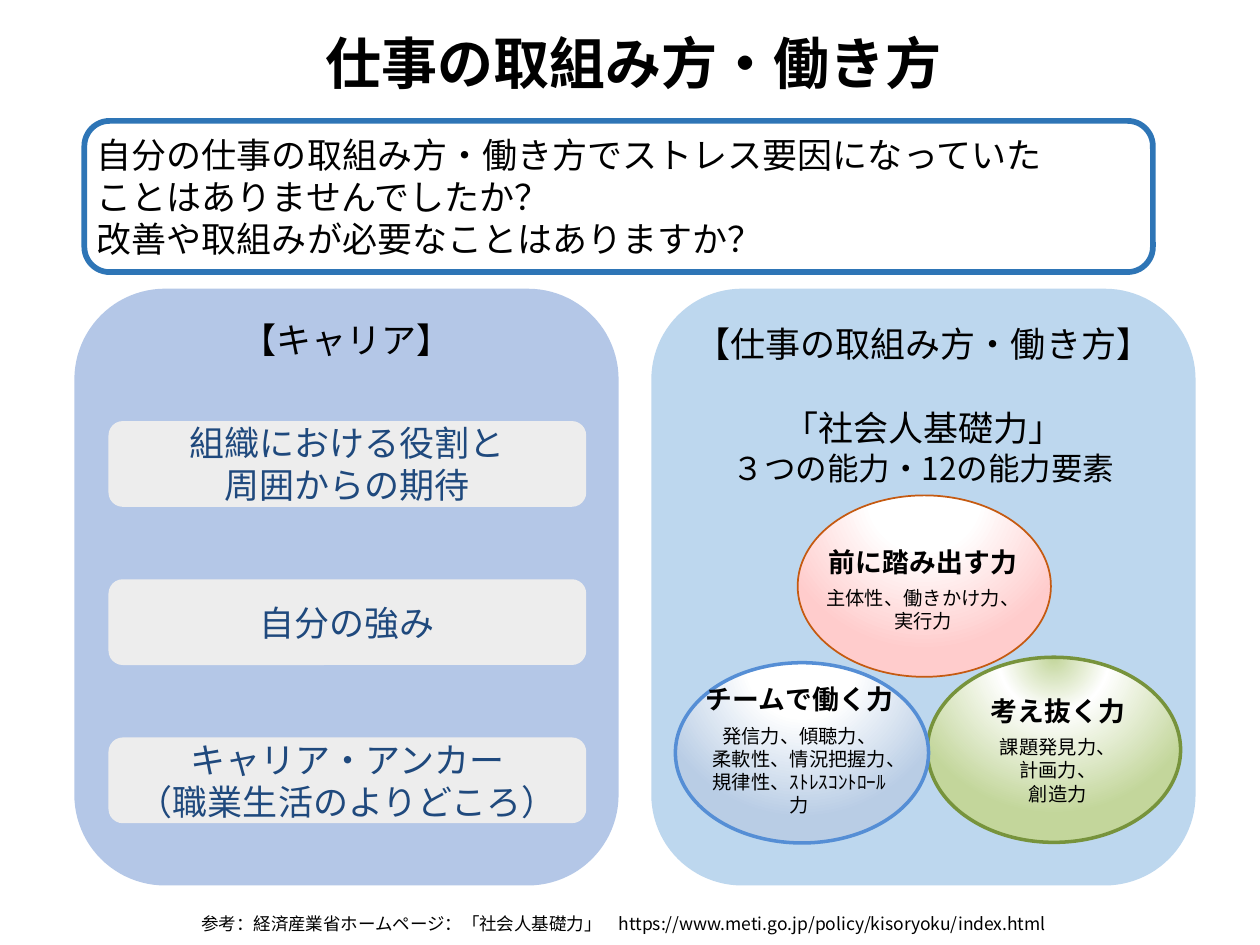
from pptx import Presentation
from pptx.dml.color import RGBColor
from pptx.enum.shapes import MSO_SHAPE
from pptx.enum.text import MSO_ANCHOR, PP_ALIGN
from pptx.oxml import parse_xml
from pptx.oxml.ns import nsdecls, qn
from pptx.util import Pt

ROUNDED, OVAL = MSO_SHAPE.ROUNDED_RECTANGLE, MSO_SHAPE.OVAL
TOP, MIDDLE = MSO_ANCHOR.TOP, MSO_ANCHOR.MIDDLE
LEFT, CENTER = PP_ALIGN.LEFT, PP_ALIGN.CENTER

BLACK = RGBColor(0x00, 0x00, 0x00)
WHITE = RGBColor(0xFF, 0xFF, 0xFF)
NAVY = RGBColor(0x1F, 0x49, 0x7D)
FRAME_BLUE = RGBColor(0x2E, 0x75, 0xB6)
CAREER_BLUE = RGBColor(0xB4, 0xC7, 0xE7)
WORK_BLUE = RGBColor(0xBD, 0xD7, 0xEE)
BOX_GRAY = RGBColor(0xED, 0xED, 0xED)
PINK, ORANGE = RGBColor(0xFF, 0xCC, 0xCC), RGBColor(0xC5, 0x5A, 0x11)
LIME, GREEN = RGBColor(0xC3, 0xD6, 0x9B), RGBColor(0x77, 0x93, 0x3C)
PALE_BLUE, BLUE = RGBColor(0xB9, 0xCD, 0xE5), RGBColor(0x55, 0x8E, 0xD5)


class SlideBuilder:
    font_name = "Noto Sans CJK JP"

    def __init__(self, presentation):
        self.slide = presentation.slides.add_slide(presentation.slide_layouts[5])

    def set_text(self, shape, lines, size=20, color=BLACK, align=CENTER, anchor=MIDDLE, margins=(0, 0, 0, 0)):
        """Fill a shape with lines, each a string or a (string, formats) pair."""
        frame = shape.text_frame
        frame.word_wrap = True
        frame.vertical_anchor = anchor
        for side, margin in zip(("left", "top", "right", "bottom"), margins):
            setattr(frame, f"margin_{side}", Pt(margin))
        for index, line in enumerate(lines):
            text, formats = (line, {}) if isinstance(line, str) else line
            paragraph = frame.paragraphs[0] if index == 0 else frame.add_paragraph()
            paragraph_formats = {"alignment": align, **formats.get("paragraph", {})}
            for name, value in paragraph_formats.items():
                setattr(paragraph, name, value)
            run = paragraph.add_run()
            run.text = text
            font_formats = {"name": self.font_name, "size": Pt(size), "bold": False, **formats.get("font", {})}
            for name, value in font_formats.items():
                setattr(run.font, name, value)
            run.font.color.rgb = color
            east_asian = run.font._element.makeelement(qn("a:ea"), {"typeface": self.font_name})
            run.font._element.find(qn("a:latin")).addnext(east_asian)

    def title(self, text, left, top, width, height):
        shape = self.slide.shapes.title
        for name, value in dict(left=left, top=top, width=width, height=height).items():
            setattr(shape, name, Pt(value))
        self.set_text(shape, [(text, {"font": {"bold": True}, "paragraph": {"line_spacing": 0.9}})], size=32)

    def shape(self, kind, bounds, fill, line=None, line_width=1):
        shape = self.slide.shapes.add_shape(kind, *map(Pt, bounds))
        shape.shadow.inherit = False
        shape.fill.solid()
        shape.fill.fore_color.rgb = fill
        if line is None:
            shape.line.fill.background()
        else:
            shape.line.color.rgb = line
            shape.line.width = Pt(line_width)
        return shape

    def glowing_oval(self, bounds, inner, outer, line, line_width):
        """Add an oval with a circular gradient centred above its top edge."""
        shape = self.shape(OVAL, bounds, outer, line, line_width)
        stops = "".join(
            f'<a:gs pos="{position * 1000}"><a:srgbClr val="{color}"/></a:gs>'
            for position, color in ((0, inner), (35, WHITE), (100, outer))
        )
        gradient = parse_xml(
            f'<a:gradFill {nsdecls("a")} rotWithShape="1"><a:gsLst>{stops}</a:gsLst><a:path path="circle">'
            '<a:fillToRect l="50000" t="-80000" r="50000" b="180000"/></a:path></a:gradFill>'
        )
        properties = shape._element.spPr
        properties.replace(properties.find(qn("a:solidFill")), gradient)

    def text_box(self, bounds, lines, **style):
        self.set_text(self.slide.shapes.add_textbox(*map(Pt, bounds)), lines, **style)


def main():
    presentation = Presentation()
    presentation.slide_width, presentation.slide_height = Pt(720), Pt(540)
    builder = SlideBuilder(presentation)
    builder.title("仕事の取組み方・働き方", 2, 0, 720, 75.6)

    question = builder.shape(ROUNDED, (48.2, 69.1, 610.6, 86.4), WHITE, FRAME_BLUE, 3.25)
    builder.set_text(question, [
        "自分の仕事の取組み方・働き方でストレス要因になっていた",
        "ことはありませんでしたか？",
        "改善や取組みが必要なことはありますか？",
    ], align=LEFT, anchor=TOP, margins=(2.9, 2.9, 2.9, 2.9))

    work_lines = [
        "【仕事の取組み方・働き方】",
        ("「社会人基礎力」", {"paragraph": {"space_before": Pt(24)}}),
        ("３つの能力・12の能力要素", {"font": {"size": Pt(18)}}),
    ]
    panels = [
        (372.2, WORK_BLUE, work_lines, 4.2),
        (42.5, CAREER_BLUE, ["【キャリア】"], 2),
    ]
    for left, fill, lines, top_margin in panels:
        panel = builder.shape(ROUNDED, (left, 165, 311, 341), fill)
        builder.set_text(panel, lines, anchor=TOP, margins=(0, top_margin, 0, 0))

    career_topics = [
        ["組織における役割と", "周囲からの期待"],
        ["自分の強み"],
        ["キャリア・アンカー", "（職業生活のよりどころ）"],
    ]
    for index, lines in enumerate(career_topics):
        box = builder.shape(ROUNDED, (62, 240.6 + 90.4 * index, 273, 49), BOX_GRAY)
        builder.set_text(box, lines, color=NAVY)

    heading = {"font": {"size": Pt(15.3), "bold": True}, "paragraph": {"space_after": Pt(5.1)}}
    abilities = [
        ((455.8, 283.1, 144.7, 103.7), WHITE, PINK, ORANGE, 1, (459.4, 306.7, 136.1, 59.8),
         "前に踏み出す力", ["主体性、働きかけ力、", "実行力"]),
        ((529.9, 375.6, 144.7, 105.8), LIME, LIME, GREEN, 2, (538.6, 393.1, 131.8, 70.6),
         "考え抜く力", ["課題発見力、", "計画力、", "創造力"]),
        ((385.9, 378.7, 144.7, 103), WHITE, PALE_BLUE, BLUE, 2, (394.6, 393.1, 124.6, 70.6),
         "チームで働く力", ["発信力、傾聴力、", "柔軟性、情況把握力、", "規律性、ｽﾄﾚｽｺﾝﾄﾛｰﾙ力"]),
    ]
    for oval, inner, outer, line, line_width, label, name, elements in abilities:
        builder.glowing_oval(oval, inner, outer, line, line_width)
        builder.text_box(label, [(name, heading), *elements], size=11, margins=(8, 3.6, 8, 3.6))

    builder.text_box(
        (108, 518.4, 542.2, 19.4),
        ["参考：経済産業省ホームページ：「社会人基礎力」　https://www.meti.go.jp/policy/kisoryoku/index.html"],
        size=10, align=LEFT, anchor=TOP, margins=(7.2, 3.6, 7.2, 3.6),
    )
    presentation.save("out.pptx")


if __name__ == "__main__":
    main()
